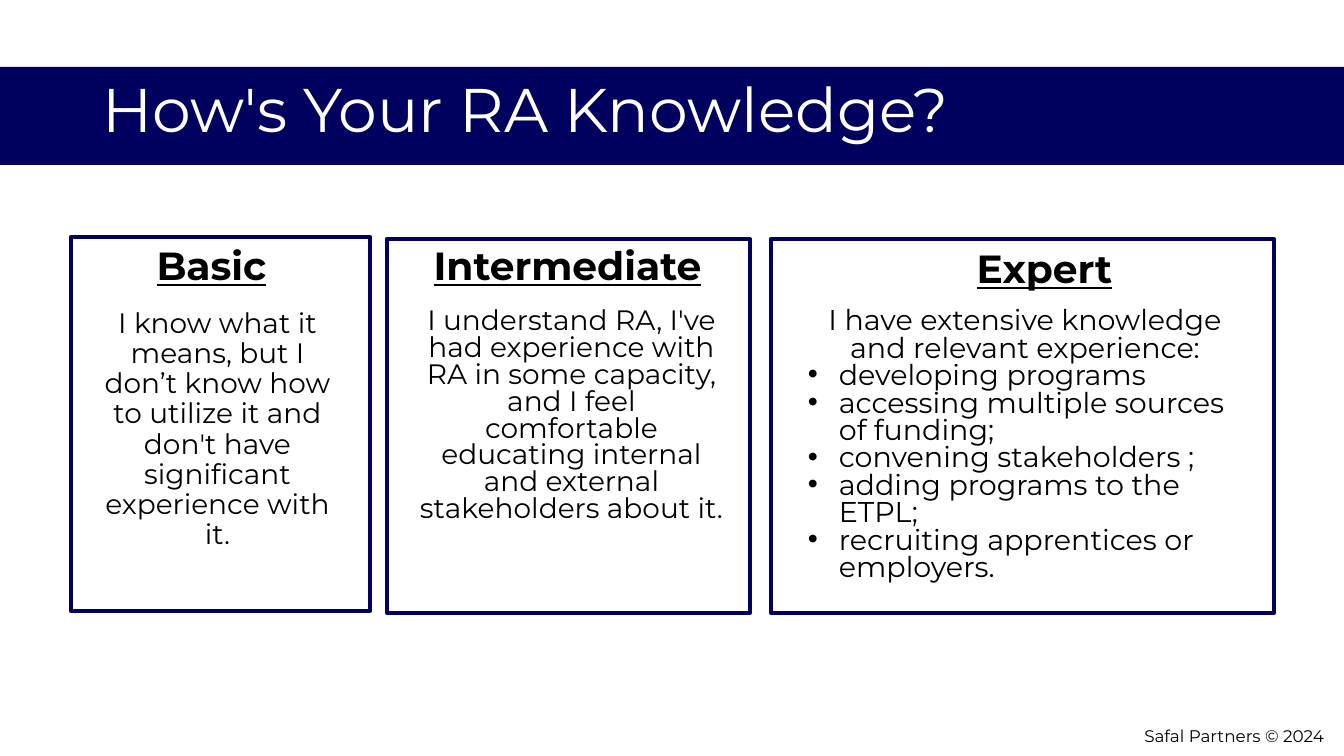
from lxml.etree import SubElement
from pptx import Presentation
from pptx.dml.color import RGBColor
from pptx.enum.shapes import MSO_SHAPE
from pptx.enum.text import MSO_ANCHOR, PP_ALIGN
from pptx.oxml.ns import qn
from pptx.util import Emu, Pt

NAVY = RGBColor(0x00, 0x01, 0x5E)
WHITE = RGBColor(0xFF, 0xFF, 0xFF)
BLACK = RGBColor(0x00, 0x00, 0x00)
FONT = "Montserrat"
PAGE_WIDTH, PAGE_HEIGHT = 1344, 756
CARD_HEIGHT = 374
BULLET_INDENT = 31

# Card box, then heading and body boxes measured from the card's corner.
LEVELS = [
    dict(box=(71, 237, 299, CARD_HEIGHT), heading="Basic",
         heading_box=(7, 5, 267, 62), body_box=(13, 67, 267, 312),
         intro="I know what it means, but I don’t know how to utilize it "
               "and don't have significant experience with it.",
         spacing=0.9),
    dict(box=(387, 239, 363, CARD_HEIGHT), heading="Intermediate",
         heading_box=(31, 3, 299, 70), body_box=(21, 65, 327, 277),
         intro="I understand RA, I've had experience with RA in some capacity, "
               "and I feel comfortable educating internal and external "
               "stakeholders about it."),
    dict(box=(771, 239, 503, CARD_HEIGHT), heading="Expert",
         heading_box=(140, 6, 267, 62), body_box=(27, 65, 454, 290),
         intro="I have extensive knowledge and relevant experience:", size=20.4,
         bullets=["developing programs",
                  "accessing multiple sources of funding;",
                  "convening stakeholders ;",
                  "adding programs to the ETPL;",
                  "recruiting apprentices or employers."]),
]


def px(length):
    return Emu(round(length * 914400 / 100.8))


def add_rectangle(page, box, fill=None, line=None):
    shape = page.shapes.add_shape(MSO_SHAPE.RECTANGLE, *map(px, box))
    shape.shadow.inherit = False
    if fill is None:
        shape.fill.background()
    else:
        shape.fill.solid()
        shape.fill.fore_color.rgb = fill
    if line is None:
        shape.line.fill.background()
    else:
        shape.line.color.rgb = line
        shape.line.width = Pt(3)


def add_bullet(para):
    properties = para._p.get_or_add_pPr()
    properties.set("marL", str(px(BULLET_INDENT)))
    properties.set("indent", str(-px(BULLET_INDENT)))
    SubElement(properties, qn("a:buFont")).set("typeface", "Arial")
    SubElement(properties, qn("a:buChar")).set("char", "•")


def write_para(para, text, size=20, color=BLACK, align=PP_ALIGN.LEFT,
               spacing=0.9, bold=False, underline=False, bullet=False):
    para.alignment = align
    para.line_spacing = spacing
    if bullet:
        add_bullet(para)
    span = para.add_run()
    span.text = text
    span.font.name = FONT
    span.font.size = Pt(size)
    span.font.color.rgb = color
    span.font.bold = bold
    span.font.underline = underline


def add_text(page, box, text, anchor=MSO_ANCHOR.TOP, **style):
    frame = page.shapes.add_textbox(*map(px, box)).text_frame
    frame.word_wrap = True
    frame.vertical_anchor = anchor
    write_para(frame.paragraphs[0], text, **style)
    return frame


def add_header(page, box):
    left, top, width, height = box
    add_rectangle(page, box, fill=NAVY)
    add_text(page, (left + 93, top - 27, width - 185, height + 48),
             "How's Your RA Knowledge?", anchor=MSO_ANCHOR.MIDDLE,
             size=44, color=WHITE)


def add_level_card(page, box, heading, heading_box, body_box, intro,
                   size=20, spacing=0.8, bullets=()):
    left, top = box[:2]

    def inside(part):
        return (left + part[0], top + part[1], *part[2:])

    add_rectangle(page, box, line=NAVY)
    add_text(page, inside(heading_box), heading, size=28, bold=True,
             underline=True, align=PP_ALIGN.CENTER)
    frame = add_text(page, inside(body_box), intro, size=size,
                     spacing=spacing, align=PP_ALIGN.CENTER)
    for bullet in bullets:
        write_para(frame.add_paragraph(), bullet, size=size,
                   spacing=spacing, bullet=True)


def add_footer(page, box):
    add_text(page, box, "Safal Partners © 2024", anchor=MSO_ANCHOR.MIDDLE,
             size=12, align=PP_ALIGN.RIGHT, spacing=1.0)


def main():
    deck = Presentation()
    deck.slide_width, deck.slide_height = px(PAGE_WIDTH), px(PAGE_HEIGHT)
    page = deck.slides.add_slide(deck.slide_layouts[6])
    add_header(page, (0, 67, PAGE_WIDTH, 98))
    for level in LEVELS:
        add_level_card(page, **level)
    add_footer(page, (968, 716, 366, 40))
    deck.save("out.pptx")


if __name__ == "__main__":
    main()
